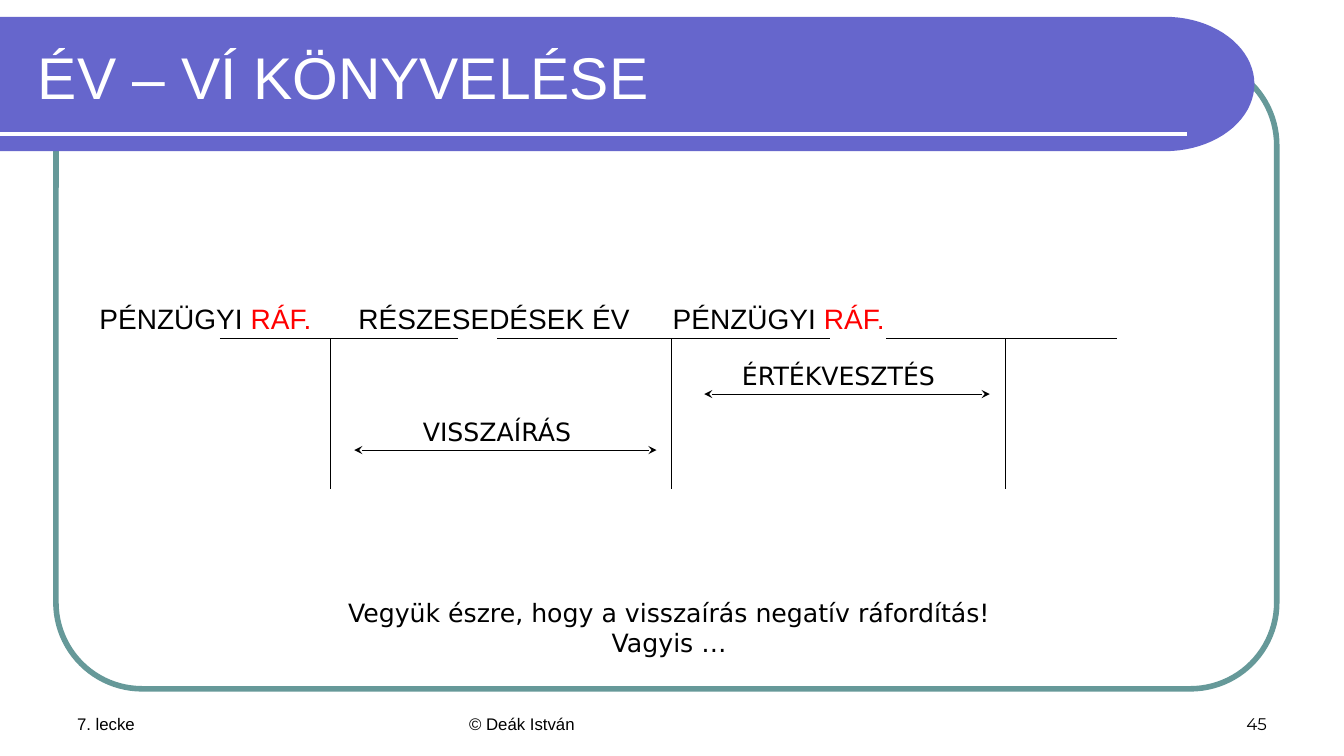
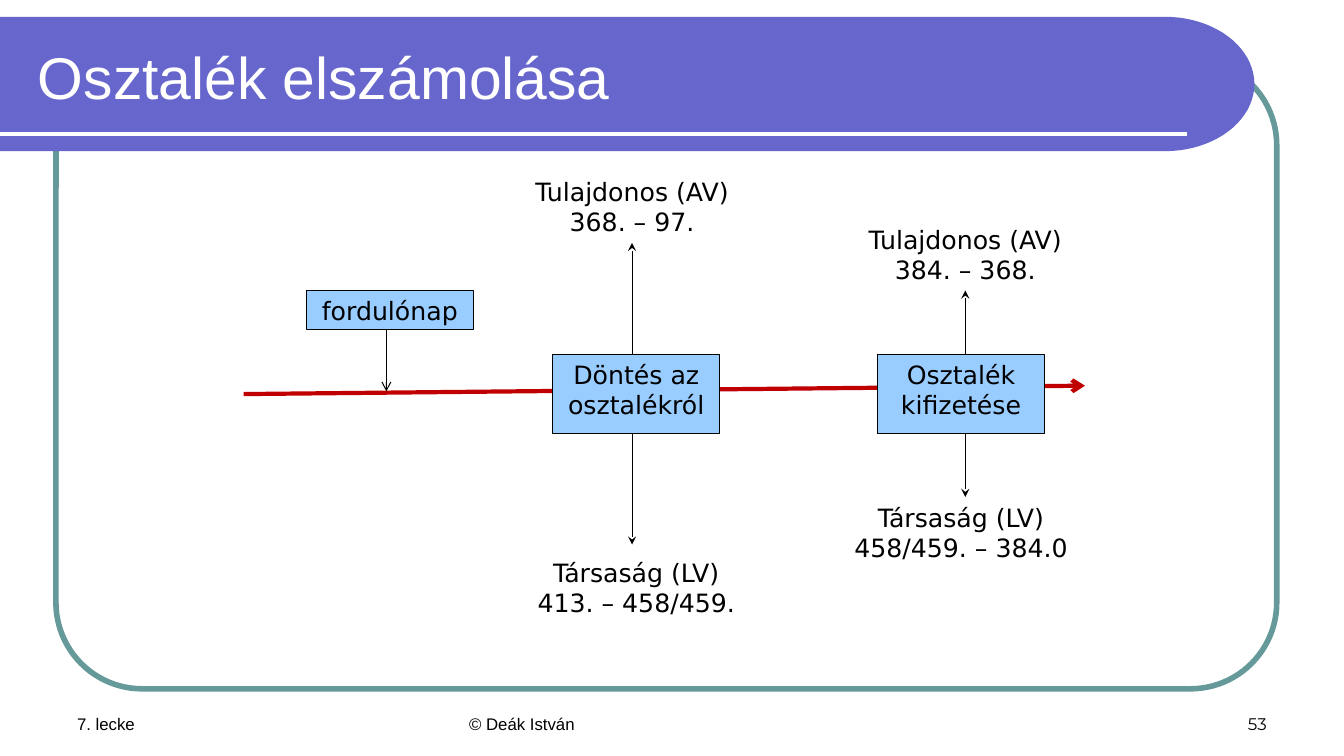
from math import cos, pi, sin

from lxml.etree import SubElement
from pptx import Presentation
from pptx.dml.color import RGBColor
from pptx.enum.shapes import MSO_CONNECTOR as Connector, MSO_SHAPE as Shape
from pptx.enum.text import MSO_ANCHOR as Anchor, PP_ALIGN as Align
from pptx.oxml.ns import qn
from pptx.util import Pt

BLACK, WHITE, RED = "000000", "FFFFFF", "FF0000"
BAND, FRAME, TIMELINE, EVENT = "6666CC", "669999", "C00000", "99CCFF"
SANS, DIAGRAM, NUMBER = "Arial", "DejaVu Sans", "Montserrat"


def color(value):
    return RGBColor.from_string(value)


def place(box):
    return [Pt(value) for value in box]


def write(frame, lines, size, font, ink=BLACK, align=Align.LEFT):
    for index, line in enumerate(lines):
        para = frame.paragraphs[0] if index == 0 else frame.add_paragraph()
        para.alignment = align
        para.font.size = Pt(size)
        para.font.name = font
        para.font.color.rgb = color(ink)
        para.add_run().text = line


def add_text(page, box, lines, size, font, ink=BLACK, align=Align.LEFT,
             anchor=Anchor.TOP, wrap=True):
    frame = page.shapes.add_textbox(*place(box)).text_frame
    frame.word_wrap = wrap
    frame.vertical_anchor = anchor
    write(frame, lines, size, font, ink, align)
    return frame


def add_label(page, center, top, lines, width=180):
    box = (center - width / 2, top, width, 8 + 21 * len(lines))
    add_text(page, box, lines, 18, DIAGRAM, align=Align.CENTER, wrap=False)


def add_line(page, start, end, ink=BLACK, width=0.75, head=None, tail=None):
    line = page.shapes.add_connector(Connector.STRAIGHT, *place(start + end))
    line.line.color.rgb = color(ink)
    line.line.width = Pt(width)
    outline = line.line._get_or_add_ln()
    for tag, kind in (("a:headEnd", head), ("a:tailEnd", tail)):
        if kind:
            SubElement(outline, qn(tag), type=kind)
    SubElement(line._element.spPr, qn("a:effectLst"))


def add_arrow(page, start, end):
    add_line(page, start, end, head="stealth", tail="stealth")


def add_event_box(page, box, caption):
    shape = page.shapes.add_shape(Shape.RECTANGLE, *place(box))
    shape.shadow.inherit = False
    shape.fill.solid()
    shape.fill.fore_color.rgb = color(EVENT)
    shape.line.color.rgb = color(BLACK)
    shape.line.width = Pt(0.75)
    shape.text_frame.word_wrap = True
    shape.text_frame.vertical_anchor = Anchor.TOP
    write(shape.text_frame, [caption], 18, DIAGRAM, align=Align.CENTER)


def draw_content_frame(page, box):
    frame = page.shapes.add_shape(Shape.ROUNDED_RECTANGLE, *place(box))
    frame.adjustments[0] = 0.137
    frame.shadow.inherit = False
    frame.fill.background()
    frame.line.color.rgb = color(FRAME)
    frame.line.width = Pt(4)


def draw_title_band(page, box, title):
    left, top, width, height = box
    radius_x, radius_y, steps = 64, height / 2, 40
    angles = [pi * step / steps - pi / 2 for step in range(steps + 1)]
    cap = [(left + width - radius_x + radius_x * cos(angle),
            top + radius_y + radius_y * sin(angle)) for angle in angles]
    outline = page.shapes.build_freeform(Pt(left), Pt(top))
    points = cap + [(left, top + height)]
    outline.add_line_segments([place(point) for point in points], close=True)
    band = outline.convert_to_shape()
    band.shadow.inherit = False
    band.fill.solid()
    band.fill.fore_color.rgb = color(BAND)
    band.line.fill.background()
    rule = top + height - 12
    add_line(page, (left, rule), (left + width - 48, rule), WHITE, 3)
    add_text(page, (left + 20, top + 6, width - 54, 72), [title], 42, SANS,
             WHITE, anchor=Anchor.MIDDLE)


def draw_footer(page, box, number):
    left, top, width, height = box
    for offset, part, text, font, align in (
            (0, 224, "7. lecke", SANS, Align.LEFT),
            (280, 304, "© Deák István", SANS, Align.LEFT),
            (width - 224, 224, number, NUMBER, Align.RIGHT)):
        add_text(page, (left + offset, top, part, height), [text], 12, font,
                 align=align, anchor=Anchor.BOTTOM)


def add_page(deck, title, number):
    page = deck.slides.add_slide(deck.slide_layouts[6])
    draw_content_frame(page, (40, 42, 872, 450))
    draw_title_band(page, (0, 12, 896, 96), title)
    draw_footer(page, (48, 492, 864, 36), number)
    return page


def draw_accounts(page, box):
    left, top, width, height = box
    bar = top + 27
    accounts = (
        (0, "PÉNZÜGYI ", "RÁF.", 86, 256, 165),
        (185, "RÉSZESEDÉSEK ÉV", "", 284, 522, 409),
        (409.5, "PÉNZÜGYI ", "RÁF.", 562, width, 647))
    for offset, name, suffix, start, end, stem in accounts:
        frame = add_text(page, (left + offset, top, 220, 23), [name], 20, SANS)
        frame.margin_left = frame.margin_top = 0
        frame.margin_right = frame.margin_bottom = 0
        if suffix:
            span = frame.paragraphs[0].add_run()
            span.text = suffix
            span.font.color.rgb = color(RED)
        add_line(page, (left + start, bar), (left + end, bar))
        add_line(page, (left + stem, bar), (left + stem, top + height))
    for start, end, drop, caption in ((432, 636, 66.5, "ÉRTÉKVESZTÉS"),
                                      (182, 398, 106.5, "VISSZAÍRÁS")):
        level = top + drop
        add_arrow(page, (left + start, level), (left + end, level))
        add_label(page, left + (start + end) / 2 - 6, level - 27.5, [caption])


def draw_event(page, box, caption, axis, rise, fall, owner, company, gap=0):
    left, top, width, height = box
    center = left + width / 2
    upper, lower = top - rise, top + height + fall
    add_arrow(page, (left + axis, upper), (left + axis, lower))
    add_event_box(page, box, caption)
    add_label(page, left + axis, upper - 51, ["Tulajdonos (AV)", owner])
    add_label(page, center, lower + gap, ["Társaság (LV)", company])


def draw_closing_date(page, box, caption):
    left, top, width, height = box
    axis = left + 57
    add_line(page, (axis, top + height), (axis, top + 72), tail="arrow")
    add_event_box(page, box, caption)


def build_accounts_page(deck):
    page = add_page(deck, "ÉV – VÍ KÖNYVELÉSE", "45")
    draw_accounts(page, (71, 215, 727, 134))
    add_label(page, 478, 423, [
        "Vegyük észre, hogy a visszaírás negatív ráfordítás!", "Vagyis …"], 478)


def build_dividend_page(deck):
    page = add_page(deck, "Osztalék elszámolása", "53")
    add_line(page, (174, 281.5), (775, 275.5), TIMELINE, 3, tail="arrow")
    draw_closing_date(page, (219, 207.5, 119, 28), "fordulónap")
    draw_event(page, (395, 253, 119, 57), "Döntés az osztalékról", 56.5,
               79.5, 79, "368. – 97.", "413. – 458/459.", 5.5)
    draw_event(page, (627, 253, 119, 57), "Osztalék kifizetése", 62.5,
               45.5, 45, "384. – 368.", "458/459. – 384.0")


def main():
    deck = Presentation()
    deck.slide_width, deck.slide_height = Pt(960), Pt(540)
    build_accounts_page(deck)
    build_dividend_page(deck)
    deck.save("out.pptx")


if __name__ == "__main__":
    main()
